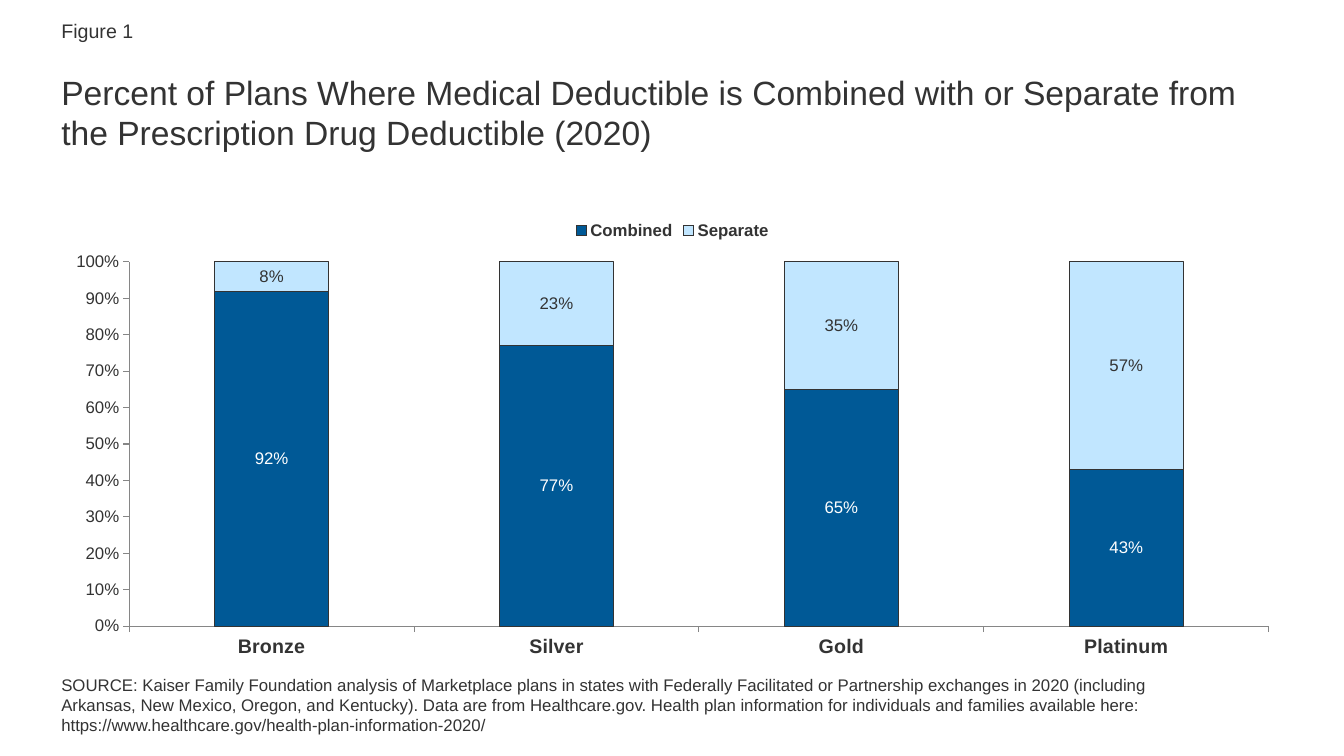
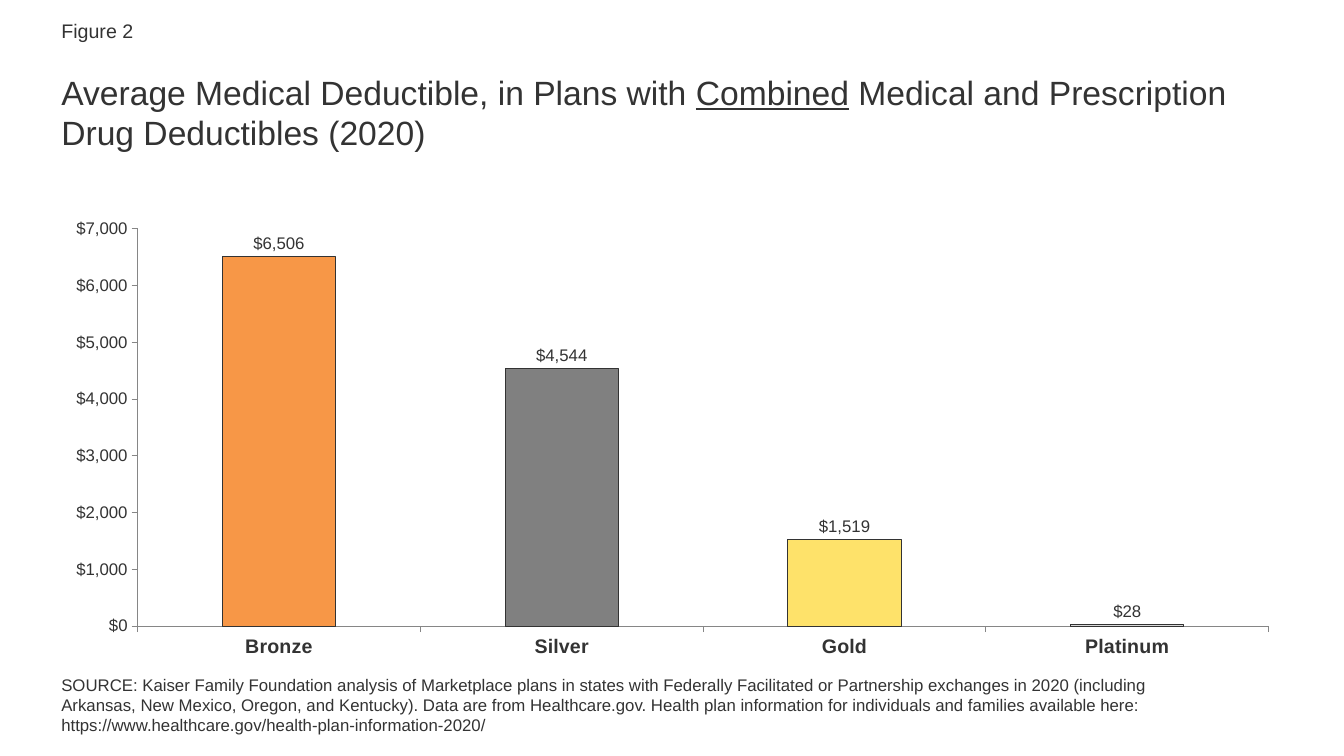
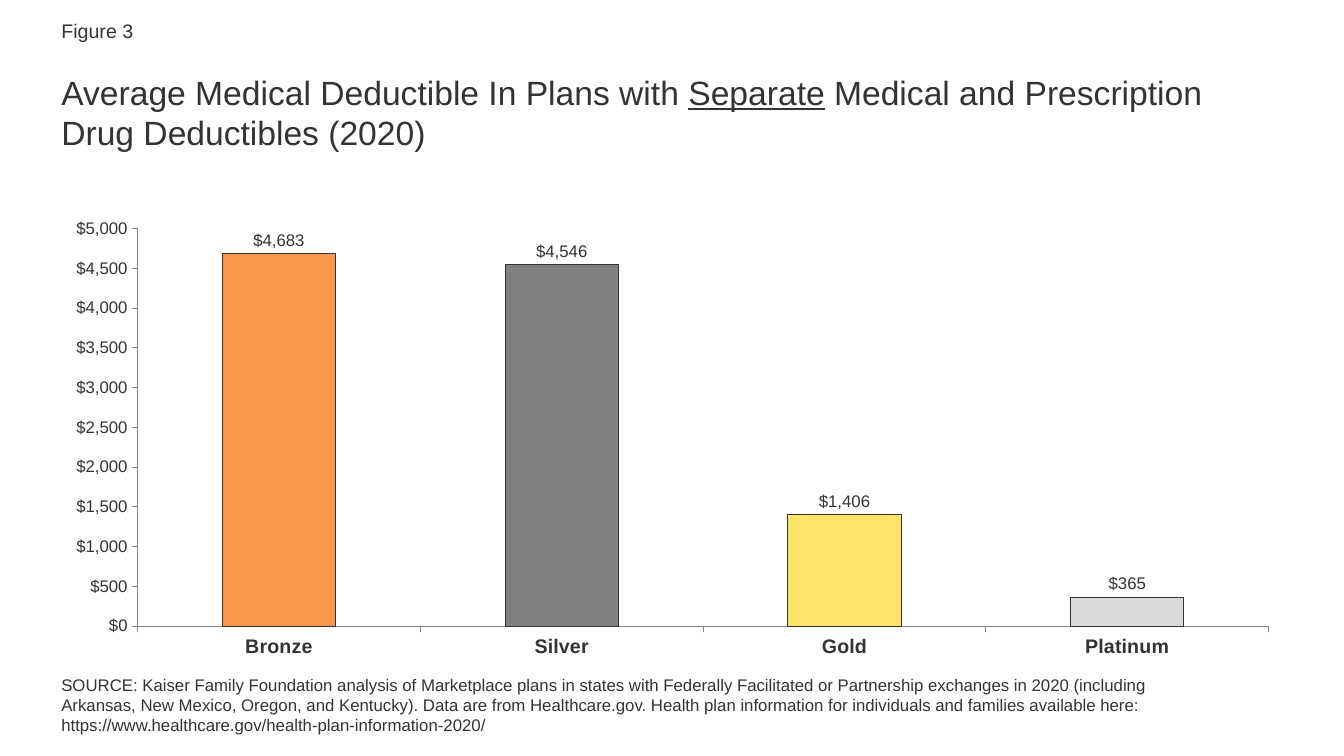
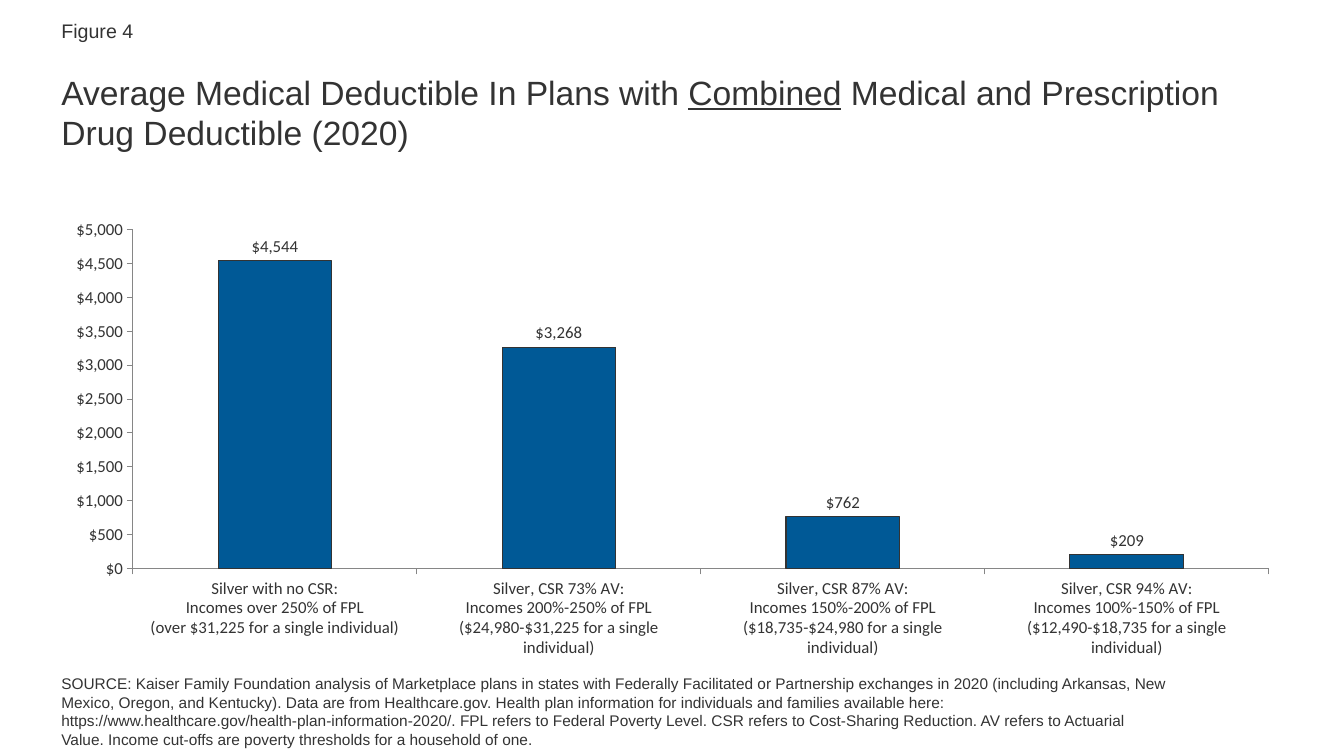
from pptx import Presentation
from pptx.chart.data import CategoryChartData
from pptx.dml.color import RGBColor as RGB
from pptx.enum.chart import XL_CHART_TYPE as CT, XL_LABEL_POSITION as LP
from pptx.enum.chart import XL_LEGEND_POSITION as LEGEND, XL_TICK_MARK as TICK
from pptx.enum.text import MSO_ANCHOR as ANCHOR
from pptx.util import Inches, Pt

COLORS = {
    "ink": "333333",
    "white": "FFFFFF",
    "axis": "868686",
    "blue": "005996",
    "sky": "C1E6FF",
    "navy": "003C64",
    "bronze": "F79747",
    "silver": "808080",
    "gold": "FEE26A",
    "platinum": "D9D9D9",
}
LEFT, WIDTH = 0.51, 12.32
PERCENT, DOLLARS = "0%", '"$"#,##0'
METALS = ["Bronze", "Silver", "Gold", "Platinum"]
METAL_COLORS = ["bronze", "silver", "gold", "platinum"]
SUBSIDY_LEVELS = [
    "Silver with no CSR:\nIncomes over 250% of FPL\n(over $31,225 for a single individual)",
    "Silver, CSR 73% AV:\nIncomes 200%-250% of FPL\n($24,980-$31,225 for a single individual)",
    "Silver, CSR 87% AV:\nIncomes 150%-200% of FPL\n($18,735-$24,980 for a single individual)",
    "Silver, CSR 94% AV:\nIncomes 100%-150% of FPL\n($12,490-$18,735 for a single individual)",
]
SOURCE = (
    "SOURCE: Kaiser Family Foundation analysis of Marketplace plans in states with "
    "Federally Facilitated or Partnership exchanges in 2020 (including Arkansas, "
    "New Mexico, Oregon, and Kentucky). Data are from Healthcare.gov. Health plan "
    "information for individuals and families available here: "
    "https://www.healthcare.gov/health-plan-information-2020/"
)
SUBSIDY_NOTE = (
    ". FPL refers to Federal Poverty Level. CSR refers to Cost-Sharing Reduction. "
    "AV refers to Actuarial Value. Income cut-offs are poverty thresholds for a "
    "household of one."
)


def rgb(name):
    return RGB.from_string(COLORS[name])


def set_font(font, size, color="ink", name="Arial", bold=False):
    font.size = Pt(size)
    font.name = name
    font.bold = bold
    font.color.rgb = rgb(color)


def add_text(s, text, top, width, height, size, anchor=ANCHOR.TOP, underlined=""):
    box = s.shapes.add_textbox(Inches(LEFT), Inches(top), Inches(width), Inches(height))
    tf = box.text_frame
    tf.word_wrap = True
    tf.vertical_anchor = anchor
    p = tf.paragraphs[0]
    parts = text.partition(underlined) if underlined else [text]
    for part in parts:
        r = p.add_run()
        r.text = part
        set_font(r.font, size)
        if part == underlined:
            r.font.underline = True


def style_axis(axis, size, font, bold=False):
    axis.has_major_gridlines = False
    axis.major_tick_mark = TICK.OUTSIDE
    axis.minor_tick_mark = TICK.NONE
    axis.format.line.color.rgb = rgb("axis")
    axis.format.line.width = Pt(0.75)
    set_font(axis.tick_labels.font, size, name=font, bold=bold)


def paint(item, color):
    item.format.fill.solid()
    item.format.fill.fore_color.rgb = rgb(color)
    item.format.line.color.rgb = rgb("ink")
    item.format.line.width = Pt(0.75)


def add_series_style(series, color, label_color, number_format, position, font):
    series.invert_if_negative = False
    paint(series, color)
    labels = series.data_labels
    labels.show_value = True
    labels.number_format = number_format
    labels.number_format_is_linked = False
    labels.position = position
    set_font(labels.font, 12, label_color, font)


def add_columns(s, cats, series, number_format, top_value, step, stacked=False,
                point_colors=(), font="Arial", size=18, cat_size=14):
    data = CategoryChartData(number_format=number_format)
    data.categories = cats
    for name, values, _, _ in series:
        data.add_series(name, values)
    kind = CT.COLUMN_STACKED_100 if stacked else CT.COLUMN_CLUSTERED
    chart = s.shapes.add_chart(kind, Inches(LEFT), Inches(2.09), Inches(WIDTH),
                               Inches(4.53), data).chart
    set_font(chart.font, size, name=font)
    chart.has_title = False
    chart.has_legend = stacked
    if stacked:
        chart.legend.position = LEGEND.TOP
        chart.legend.include_in_layout = False
        set_font(chart.legend.font, 12, bold=True)

    style_axis(chart.category_axis, cat_size, font, bold=cat_size > 12)
    axis = chart.value_axis
    style_axis(axis, 12, font)
    axis.minimum_scale, axis.maximum_scale, axis.major_unit = 0, top_value, step
    axis.tick_labels.number_format = number_format
    axis.tick_labels.number_format_is_linked = False

    plot = chart.plots[0]
    plot.gap_width = 150
    plot.vary_by_categories = False
    if stacked:
        plot.overlap = 100
    position = LP.CENTER if stacked else LP.OUTSIDE_END
    for drawn, (_, _, color, label_color) in zip(plot.series, series):
        add_series_style(drawn, color, label_color, number_format, position, font)
    for i, color in enumerate(point_colors):
        paint(plot.series[0].points[i], color)


def add_figure(prs, number, title, underlined="", source=SOURCE, source_size=12, **chart):
    s = prs.slides.add_slide(prs.slide_layouts[6])
    add_columns(s, **chart)
    add_text(s, source, 6.64, 11.2, 0.75, source_size)
    add_text(s, title, 0.64, WIDTH, 0.94, 24, ANCHOR.MIDDLE, underlined)
    add_text(s, f"Figure {number}", 0.14, 3.11, 0.4, 14)


def main():
    prs = Presentation()
    prs.slide_width, prs.slide_height = Inches(13.33), Inches(7.5)

    add_figure(
        prs, 1,
        "Percent of Plans Where Medical Deductible is Combined with or Separate from "
        "the Prescription Drug Deductible (2020)",
        cats=METALS, number_format=PERCENT, top_value=1, step=0.1, stacked=True,
        series=[("Combined", [0.92, 0.77, 0.65, 0.43], "blue", "white"),
                ("Separate", [0.08, 0.23, 0.35, 0.57], "sky", "ink")])

    metal_figures = [
        (2, "Average Medical Deductible, in Plans with Combined", "Combined",
         [6506, 4544, 1519, 28], 7000, 1000),
        (3, "Average Medical Deductible In Plans with Separate", "Separate",
         [4683, 4546, 1406, 365], 5000, 500),
    ]
    for number, opening, underlined, values, top_value, step in metal_figures:
        add_figure(
            prs, number,
            f"{opening} Medical and Prescription Drug Deductibles (2020)", underlined,
            cats=METALS, number_format=DOLLARS, top_value=top_value, step=step,
            series=[("Series 1", values, "navy", "ink")], point_colors=METAL_COLORS)

    add_figure(
        prs, 4,
        "Average Medical Deductible In Plans with Combined Medical and Prescription "
        "Drug Deductible (2020)", "Combined",
        source=SOURCE + SUBSIDY_NOTE, source_size=11,
        cats=SUBSIDY_LEVELS, number_format=DOLLARS, top_value=5000, step=500,
        series=[("Series 1", [4544, 3268, 762, 209], "blue", "ink")],
        font="Calibri", size=16, cat_size=12)

    prs.save("out.pptx")


if __name__ == "__main__":
    main()
